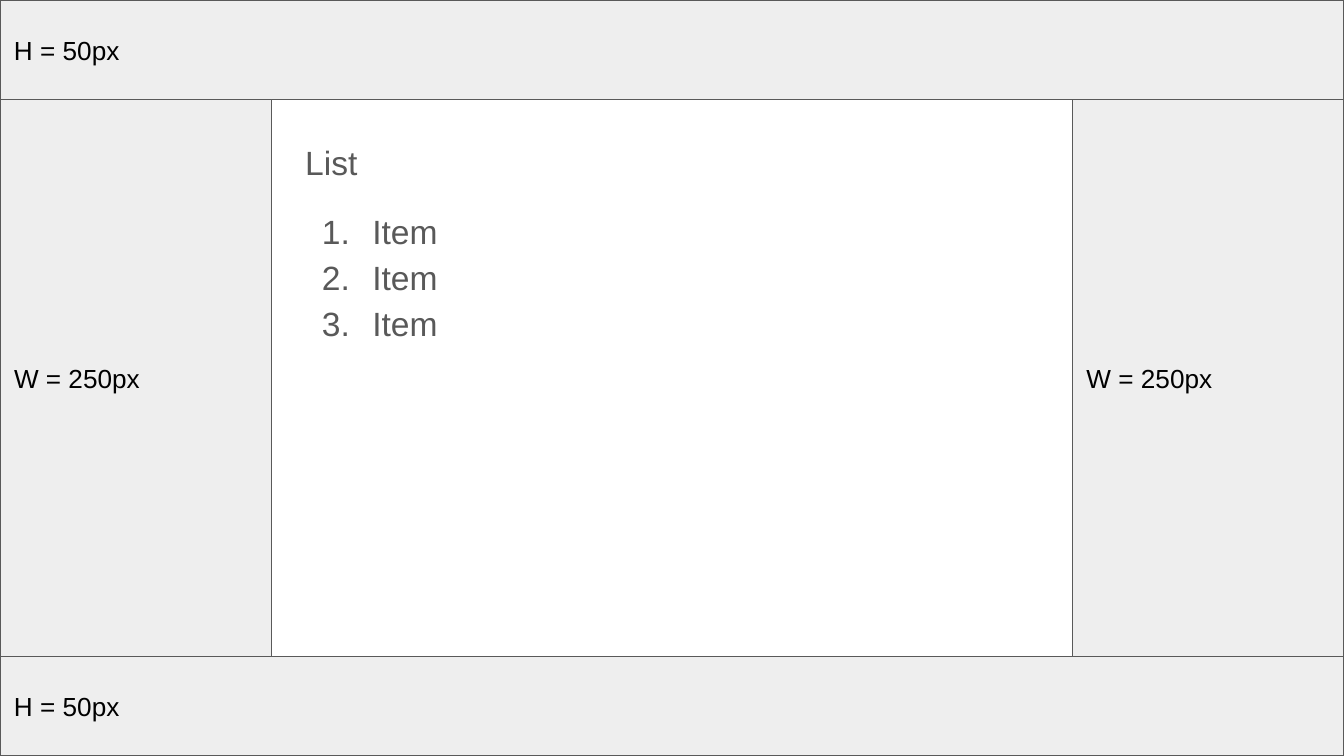
"""Build a page layout slide with grey margins and a numbered list."""
from lxml import etree
from pptx import Presentation
from pptx import util as u
from pptx.dml.color import RGBColor
from pptx.enum import shapes, text
from pptx.oxml.ns import qn

PX = 9525
WIDE, HIGH = 960, 540
BAR, SIDE = 71, 194
PAD = 10
PALE = RGBColor(0xEE, 0xEE, 0xEE)
GREY = RGBColor(0x59, 0x59, 0x59)
BLACK = RGBColor(0, 0, 0)


def px(*nums):
    return [u.Emu(n * PX) for n in nums]


def set_frame(frame, anchor):
    frame.word_wrap = True
    frame.vertical_anchor = anchor
    pad, = px(PAD)
    frame.margin_left = frame.margin_right = pad
    frame.margin_top = frame.margin_bottom = pad


def add_run(para, words, size, color):
    run = para.add_run()
    run.text = words
    run.font.name = "Arial"
    run.font.size = u.Pt(size)
    run.font.color.rgb = color


def add_band(slide, words, *box):
    band = slide.shapes.add_shape(shapes.MSO_SHAPE.RECTANGLE, *px(*box))
    band.shadow.inherit = False
    band.fill.solid()
    band.fill.fore_color.rgb = PALE
    band.line.color.rgb = GREY
    band.line.width = u.Pt(0.75)
    set_frame(band.text_frame, text.MSO_ANCHOR.MIDDLE)
    para = band.text_frame.paragraphs[0]
    para.alignment = text.PP_ALIGN.LEFT
    add_run(para, words, 14, BLACK)


def set_number(para):
    props = para._p.get_or_add_pPr()
    left, hang = px(48, -36)
    props.set("marL", str(left))
    props.set("indent", str(hang))
    tint = etree.SubElement(props, qn("a:buClr"))
    etree.SubElement(tint, qn("a:srgbClr"), val=str(GREY))
    etree.SubElement(props, qn("a:buAutoNum"), type="arabicPeriod")


def add_list(slide, title, items, *box):
    frame = slide.shapes.add_textbox(*px(*box)).text_frame
    set_frame(frame, text.MSO_ANCHOR.TOP)
    frame.auto_size = text.MSO_AUTO_SIZE.SHAPE_TO_FIT_TEXT
    for i, words in enumerate([title, *items]):
        para = frame.add_paragraph() if i else frame.paragraphs[0]
        para.line_spacing = 1.15
        para.space_before = u.Pt(12 if i == 1 else 0)
        if i:
            set_number(para)
        add_run(para, words, 18, GREY)


def main():
    deck = Presentation()
    deck.slide_width, deck.slide_height = px(WIDE, HIGH)
    slide = deck.slides.add_slide(deck.slide_layouts[6])
    for top in (0, HIGH - BAR):
        add_band(slide, "H = 50px", 0, top, WIDE, BAR)
    for left in (0, WIDE - SIDE):
        add_band(slide, "W = 250px", left, BAR, SIDE, HIGH - 2 * BAR)
    add_list(slide, "List", ["Item"] * 3, 208, 87, 315, 165)
    deck.save("out.pptx")


if __name__ == "__main__":
    main()
